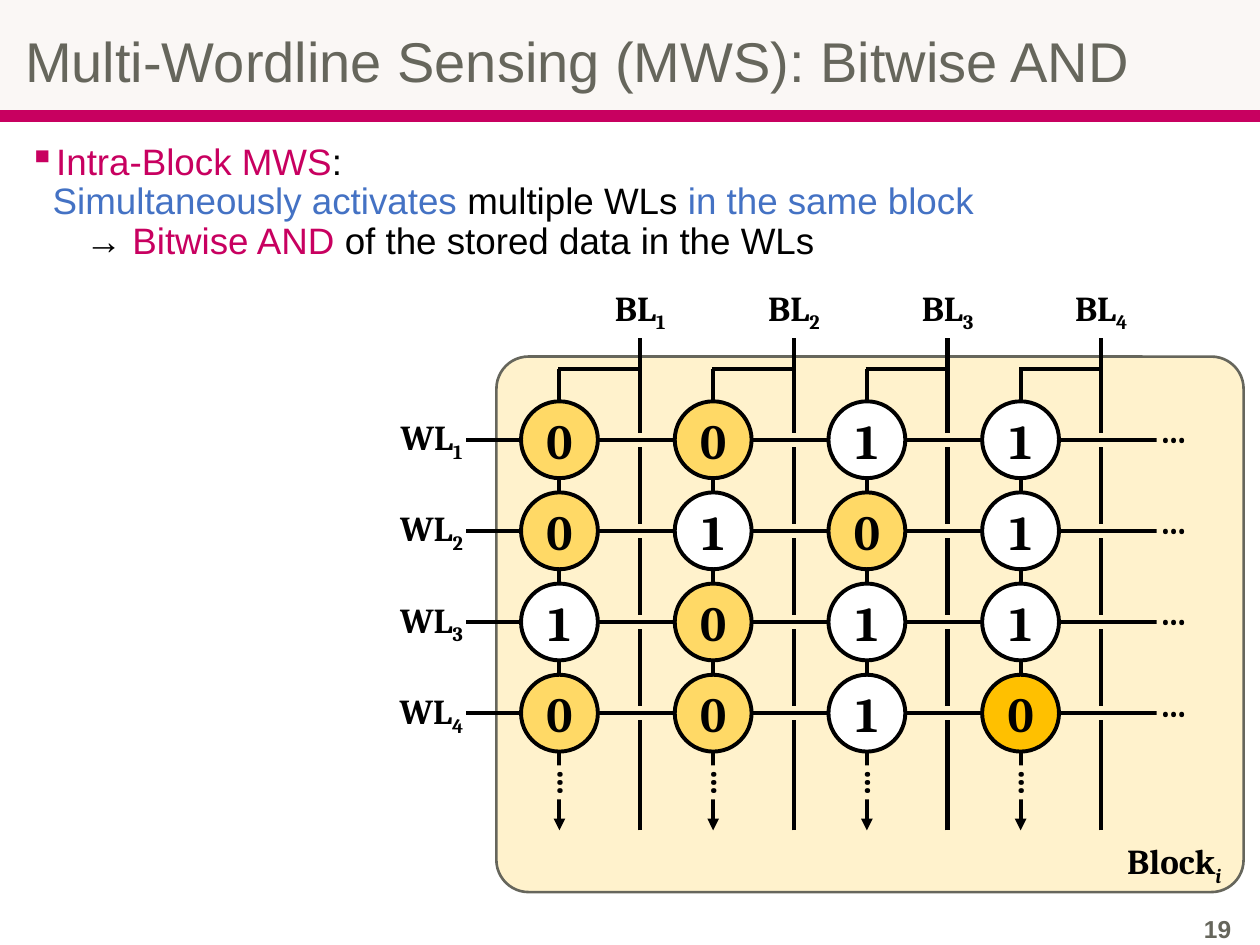
from dataclasses import dataclass

from lxml import etree
from pptx import Presentation
from pptx.dml.color import RGBColor
from pptx.enum import shapes, text
from pptx.oxml import ns
from pptx.util import Inches, Pt


@dataclass(frozen=True)
class Theme:
    sans: str = "Arial"
    serif: str = "Cambria"
    accent: str = "C80060"
    blue: str = "4472C4"
    gray: str = "66665C"
    header: str = "FAF7F5"
    block: str = "FFF2CC"
    zero: str = "FFD966"
    highlight: str = "FFC000"
    black: str = "000000"
    white: str = "FFFFFF"
    title_size: float = 32
    body_size: float = 21
    bit_size: float = 28
    label_size: float = 20
    number_size: float = 14


theme = Theme()
TITLE = "Multi-Wordline Sensing (MWS): Bitwise AND"
SUMMARY = [
    [("Intra-Block MWS", theme.accent), (":", theme.black)],
    [("Simultaneously activates ", theme.blue), ("multiple WLs ", theme.black),
     ("in the same block", theme.blue)],
]
RESULT = [("→ ", theme.black), ("Bitwise AND", theme.accent),
          (" of the stored data in the WLs", theme.black)]
CELLS = ["0011", "0101", "1011", "0010"]
HIGHLIGHTED = (3, 3)
PAGE_NUMBER = "19"

COLUMNS = [4.44 + 1.22 * i for i in range(4)]
ROWS = [3.49 + 2.17 / 3 * i for i in range(4)]
BIT_LINE_OFFSET = 0.64
CELL = 0.61
STRING_TOP, LINE_BOTTOM = 2.93, 6.59
LABEL_WIDTH, LABEL_HEIGHT = 0.59, 0.34
DOTS_WIDTH = 0.27

deck = Presentation()
deck.slide_width, deck.slide_height = Inches(10), Inches(7.5)
page = deck.slides.add_slide(deck.slide_layouts[6])


def color(value):
    return RGBColor.from_string(value)


def add_box(kind, left, top, width, height, fill, line=None, weight=1):
    box = page.shapes.add_shape(kind, *map(Inches, (left, top, width, height)))
    box.shadow.inherit = False
    box.fill.solid()
    box.fill.fore_color.rgb = color(fill)
    if line:
        box.line.color.rgb = color(line)
        box.line.width = Pt(weight)
    else:
        box.line.fill.background()
    return box


def add_text_box(left, top, width, height):
    return page.shapes.add_textbox(*map(Inches, (left, top, width, height)))


def set_font(para, name, size, fill=None, bold=False):
    para.font.name = name
    para.font.size = Pt(size)
    para.font.bold = bold
    if fill:
        para.font.color.rgb = color(fill)


def write(box, words, name, size, fill, bold=True, align=text.PP_ALIGN.CENTER,
          insets=(0, 0, 0, 0), subscript="", italic=False):
    frame = box.text_frame
    frame.word_wrap = True
    frame.vertical_anchor = text.MSO_ANCHOR.MIDDLE
    (frame.margin_left, frame.margin_top,
     frame.margin_right, frame.margin_bottom) = map(Inches, insets)
    para = frame.paragraphs[0]
    para.alignment = align
    set_font(para, name, size, fill, bold)
    para.add_run().text = words
    if subscript:
        span = para.add_run()
        span.text = subscript
        span._r.get_or_add_rPr().set("baseline", "-25000")
        if italic:
            span.font.italic = True
    return para


def write_label(box, words, **options):
    write(box, words, theme.serif, theme.label_size, theme.black, **options)


def add_label(left, top, words, subscript):
    box = add_text_box(left, top, LABEL_WIDTH, LABEL_HEIGHT)
    write_label(box, words, subscript=subscript)


def add_dots(left, top, rotation=0):
    box = add_box(shapes.MSO_SHAPE.RECTANGLE, left, top, DOTS_WIDTH, LABEL_HEIGHT,
                  theme.block)
    box.rotation = rotation
    write_label(box, "…")


def add_line(x1, y1, x2, y2, weight=2.5, fill=theme.black, arrow=False):
    line = page.shapes.add_connector(shapes.MSO_CONNECTOR.STRAIGHT,
                                     *map(Inches, (x1, y1, x2, y2)))
    line.line.color.rgb = color(fill)
    line.line.width = Pt(weight)
    if arrow:
        etree.SubElement(line.line._get_or_add_ln(), ns.qn("a:tailEnd"), type="triangle")
    etree.SubElement(line._element.spPr, ns.qn("a:effectLst"))


def add_spans(para, spans):
    for words, fill in spans:
        span = para.add_run()
        span.text = words
        span.font.color.rgb = color(fill)


def add_heading():
    add_box(shapes.MSO_SHAPE.RECTANGLE, 0, 0.88, 10, 0.08, theme.accent, theme.accent)
    box = add_box(shapes.MSO_SHAPE.RECTANGLE, 0, 0, 10, 0.87, theme.header,
                  theme.header, 0.75)
    para = write(box, TITLE, theme.sans, theme.title_size, theme.gray, bold=False,
                 align=text.PP_ALIGN.LEFT, insets=(0.2, 0.2, 0.1, 0.05))
    para.line_spacing = 0.9


def add_summary():
    frame = add_text_box(0.13, 1.09, 9.74, 1.1).text_frame
    frame.word_wrap = True
    para, result = frame.paragraphs[0], frame.add_paragraph()
    props = para._p.get_or_add_pPr()
    props.set("marL", str(Inches(0.19)))
    props.set("indent", str(Inches(-0.19)))
    bullet_color = etree.SubElement(props, ns.qn("a:buClr"))
    etree.SubElement(bullet_color, ns.qn("a:srgbClr"), val=theme.accent)
    etree.SubElement(props, ns.qn("a:buChar"), char="▪")
    result._p.get_or_add_pPr().set("marL", str(Inches(0.45)))
    for each in (para, result):
        each.line_spacing = 0.9
        set_font(each, theme.sans, theme.body_size)
    add_spans(para, SUMMARY[0])
    para.add_line_break()
    add_spans(para, SUMMARY[1])
    add_spans(result, RESULT)


def add_array():
    block = add_box(shapes.MSO_SHAPE.ROUNDED_RECTANGLE, 3.94, 2.83, 5.93, 4.25,
                    theme.block, theme.gray, 1.5)
    block.adjustments[0] = 0.06
    for number, x in enumerate(COLUMNS, 1):
        bit_line = x + BIT_LINE_OFFSET
        add_label(bit_line - LABEL_WIDTH / 2, 2.29, "BL", str(number))
        add_line(x, STRING_TOP, x, LINE_BOTTOM, 2.25, arrow=True)
        add_line(bit_line, LINE_BOTTOM, bit_line, 2.68)
        add_line(x - 0.01, STRING_TOP, bit_line + 0.01, STRING_TOP)
        add_dots(x - 0.22, 6.04, 270)
    for number, y in enumerate(ROWS, 1):
        add_line(4.03, y, 9.18, y, 8, theme.block)
        add_line(3.7, y, 9.18, y)
        add_dots(9.18, y - 0.25)
        add_label(3.13, y - LABEL_HEIGHT / 2, "WL", str(number))
    for row, (y, bits) in enumerate(zip(ROWS, CELLS)):
        for column, (x, bit) in enumerate(zip(COLUMNS, bits)):
            fill = theme.zero if bit == "0" else theme.white
            if (row, column) == HIGHLIGHTED:
                fill = theme.highlight
            cell = add_box(shapes.MSO_SHAPE.OVAL, x - CELL / 2, y - CELL / 2, CELL, CELL,
                           fill, theme.black, 2.25)
            write(cell, bit, theme.serif, theme.bit_size, theme.black)
    write_label(add_text_box(8.89, 6.68, 0.86, 0.35), "Block", subscript="i", italic=True)


add_heading()
add_summary()
add_array()
write(add_text_box(7.62, 7.17, 2.25, 0.4), PAGE_NUMBER, theme.sans, theme.number_size,
      theme.gray, align=text.PP_ALIGN.RIGHT, insets=(0.1, 0.05, 0.1, 0.05))
deck.save("out.pptx")
